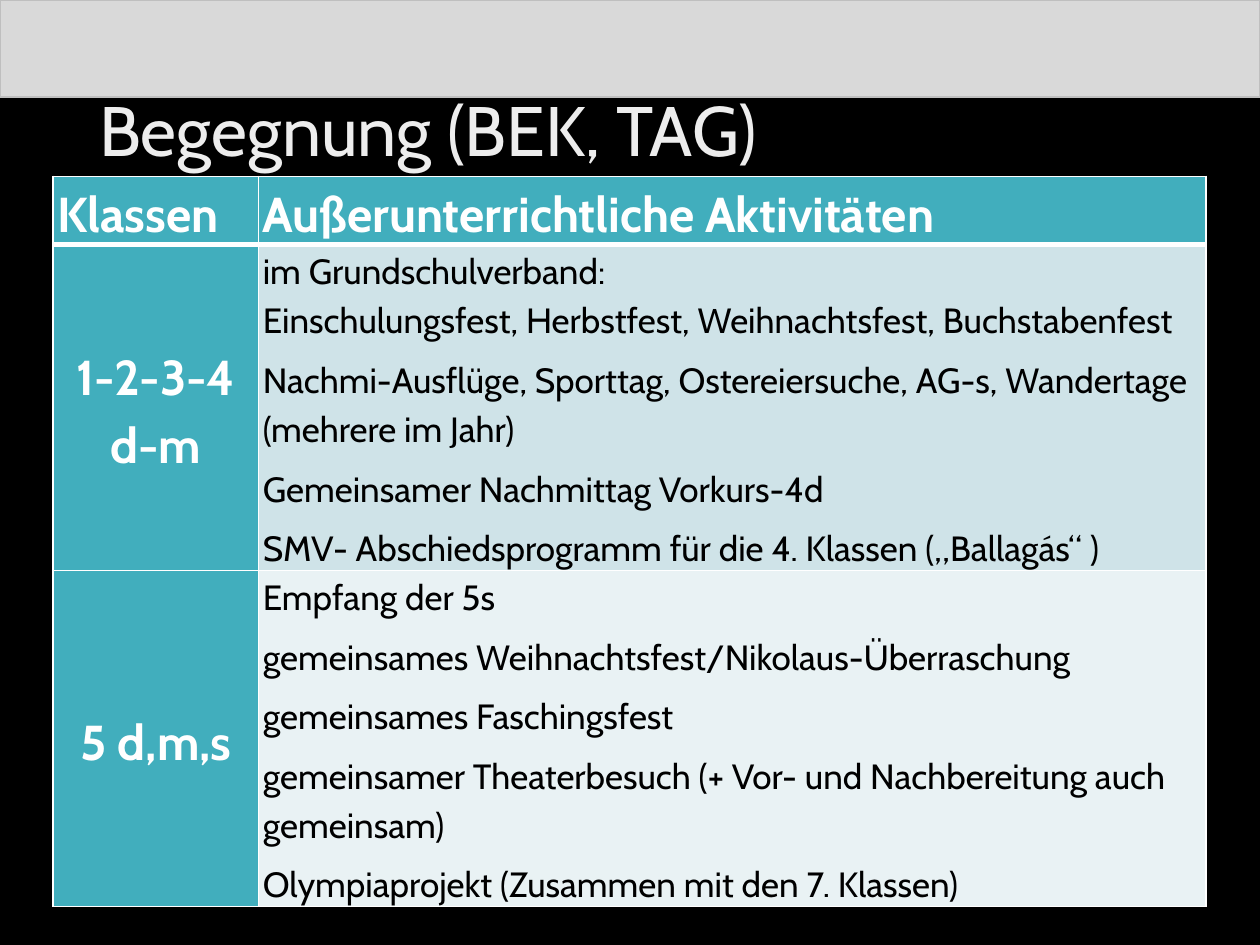
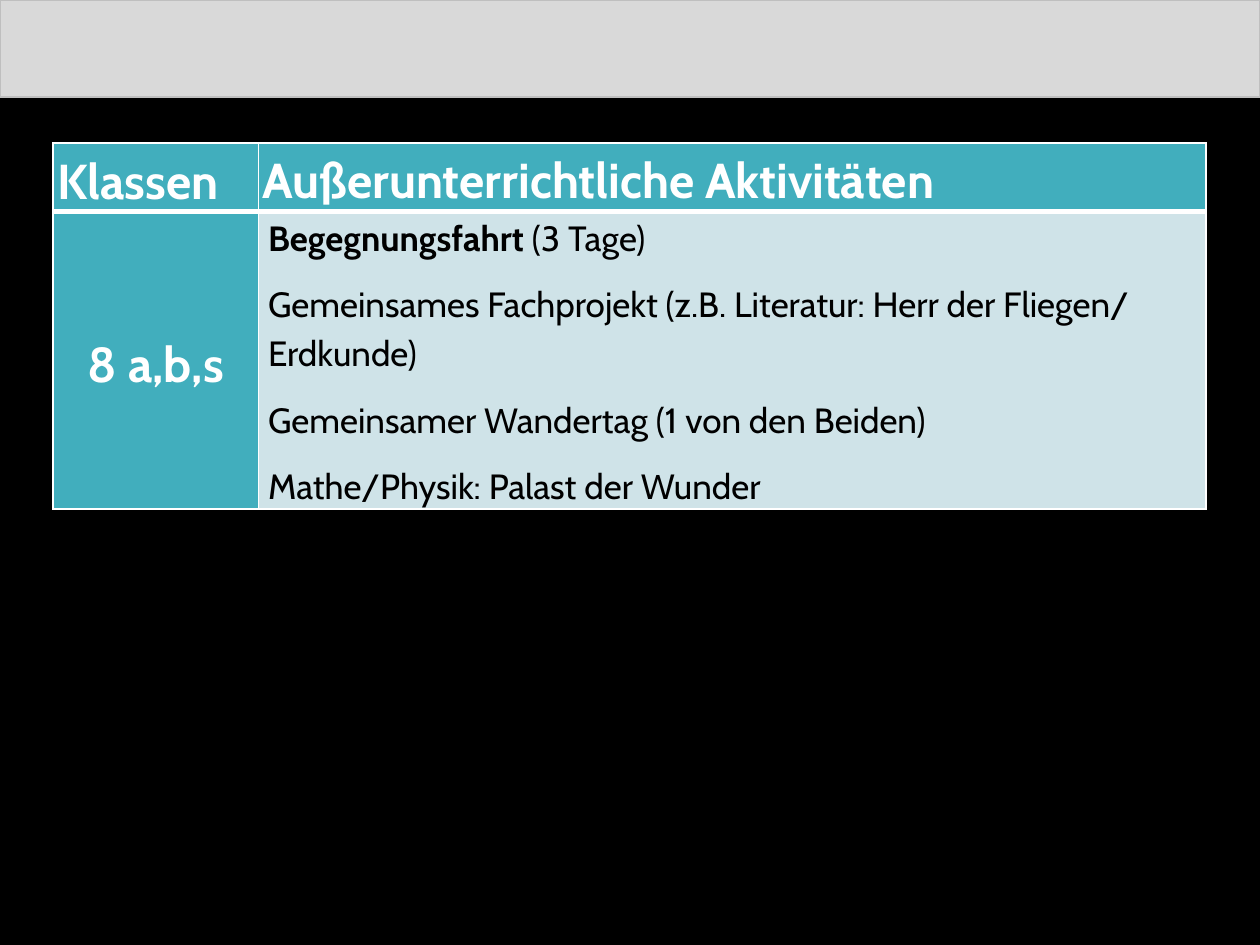
from pptx import Presentation
from pptx.dml.color import RGBColor
from pptx.enum import shapes, text
from pptx.util import Pt
from lxml import etree

NS = "http://schemas.openxmlformats.org/drawingml/2006/main"
FONT = "Cabin"
BLACK, WHITE, TEAL = "000000", "FFFFFF", "41AEBD"
BAND, RIM, TITLE = "D9D9D9", "BFBFBF", "EDEDED"
TINTS = ["CFE3E8", "E9F2F4"]
COLS = [117.4, 541.4]
LEFT = 30.4
HEAD = ["Klassen", "Außerunterrichtliche Aktivitäten"]


def rgb(code):
    return RGBColor.from_string(code)


def edge(cell, sides):
    """Draw white cell borders; sides maps L, R, T, B to widths in points."""
    props = cell._tc.get_or_add_tcPr()
    for side in "LRTB":
        line = etree.SubElement(props, f"{{{NS}}}ln{side}", w=str(Pt(sides[side])))
        fill = etree.SubElement(line, f"{{{NS}}}solidFill")
        etree.SubElement(fill, f"{{{NS}}}srgbClr", val=WHITE)


class Deck:
    def __init__(self):
        self.prs = Presentation()
        self.prs.slide_width, self.prs.slide_height = Pt(720), Pt(540)
        back = self.prs.slide_master.background.fill
        back.solid()
        back.fore_color.rgb = rgb(BLACK)
        self.slide = None

    def page(self, title=None):
        layout = self.prs.slide_layouts[5 if title else 6]
        self.slide = self.prs.slides.add_slide(layout)
        self.band()
        if title:
            self.title(title)

    def band(self):
        tree = self.slide.shapes
        bar = tree.add_shape(shapes.MSO_SHAPE.RECTANGLE, 0, 0, Pt(720), Pt(55.6))
        bar.shadow.inherit = False
        bar.fill.solid()
        bar.fill.fore_color.rgb = rgb(BAND)
        bar.line.color.rgb = rgb(RIM)
        bar.line.width = Pt(1)
        tree._spTree.insert(2, bar._element)  # behind the title

    def title(self, words):
        box = self.slide.shapes.title
        box.left, box.top, box.width, box.height = Pt(49.5), Pt(24.5), Pt(621), Pt(104.4)
        frame = box.text_frame
        frame.word_wrap = True
        frame.vertical_anchor = text.MSO_ANCHOR.MIDDLE
        para = frame.paragraphs[0]
        para.alignment = text.PP_ALIGN.LEFT
        para.line_spacing = 0.9
        self.run(para, words, 40, TITLE)

    def run(self, para, words, size, color, bold=False):
        run = para.add_run()
        run.text = words
        font = run.font
        font.name, font.size, font.bold = FONT, Pt(size), bold
        font.color.rgb = rgb(color)

    def cell(self, cell, fill, pad, sides, middle=False):
        edge(cell, sides)
        cell.fill.solid()
        cell.fill.fore_color.rgb = rgb(fill)
        cell.margin_left = cell.margin_right = Pt(pad)
        cell.margin_top = cell.margin_bottom = 0
        if middle:
            cell.vertical_anchor = text.MSO_ANCHOR.MIDDLE

    def para(self, cell, first, after):
        frame = cell.text_frame
        para = frame.paragraphs[0] if first else frame.add_paragraph()
        para.line_spacing = 1.15
        para.space_after = Pt(after)
        return para

    def label(self, cell, words, center=False):
        para = self.para(cell, True, 10)
        if center:
            para.alignment = text.PP_ALIGN.CENTER
        self.run(para, words, 28, WHITE, True)

    def items(self, cell, lines):
        """Each line is (space after, plain words, optional bold lead)."""
        for i, (after, words, *lead) in enumerate(lines):
            para = self.para(cell, i == 0, after)
            for part in lead:
                self.run(para, part, 20, BLACK, True)
            self.run(para, words, 20, BLACK)

    def table(self, top, heights, rows, pad):
        """Header row, then one row for each (classes, activities)."""
        grid = self.slide.shapes.add_table(
            len(heights), 2, Pt(LEFT), Pt(top), Pt(sum(COLS)), Pt(sum(heights))).table
        grid.first_row = grid.horz_banding = False
        for col, width in zip(grid.columns, COLS):
            col.width = Pt(width)
        for row, height in zip(grid.rows, heights):
            row.height = Pt(height)
        thin = dict.fromkeys("LRTB", 1)
        for c, words in enumerate(HEAD):
            head = grid.cell(0, c)
            self.cell(head, TEAL, 2.4, {**thin, "B": 3}, c == 0)
            self.label(head, words)
        for r, (name, lines) in enumerate(rows, 1):
            sides = {**thin, "T": 3 if r == 1 else 1}
            left, right = grid.cell(r, 0), grid.cell(r, 1)
            self.cell(left, TEAL, pad, sides, True)
            self.label(left, name, True)
            self.cell(right, TINTS[r - 1], pad, sides)
            self.items(right, lines)


def main():
    deck = Deck()
    deck.page("Begegnung (BEK, TAG)")
    deck.table(100.8, [38.6, 186, 192], [
        ("1-2-3-4 d-m", [
            (0, "im Grundschulverband:"),
            (6, "Einschulungsfest, Herbstfest, Weihnachtsfest, Buchstabenfest"),
            (6, "Nachmi-Ausflüge, Sporttag, Ostereiersuche, AG-s, Wandertage (mehrere im Jahr)"),
            (6, "Gemeinsamer Nachmittag Vorkurs-4d"),
            (10, "SMV- Abschiedsprogramm für die 4. Klassen („Ballagás“ )"),
        ]),
        ("5 d,m,s", [(6, words) for words in (
            "Empfang der 5s",
            "gemeinsames Weihnachtsfest/Nikolaus-Überraschung",
            "gemeinsames Faschingsfest",
            "gemeinsamer Theaterbesuch (+ Vor- und Nachbereitung auch gemeinsam)",
            "Olympiaprojekt (Zusammen mit den 7. Klassen)",
        )]),
    ], 2.4)

    deck.page()
    deck.table(81.6, [38.6, 169.8], [
        ("8 a,b,s", [
            (10, " (3 Tage)", "Begegnungsfahrt"),
            (10, "Gemeinsames Fachprojekt (z.B. Literatur: Herr der Fliegen/ Erdkunde)"),
            (10, "Gemeinsamer Wandertag (1 von den Beiden)"),
            (10, "Mathe/Physik: Palast der Wunder"),
        ]),
    ], 5.4)
    deck.prs.save("out.pptx")


if __name__ == "__main__":
    main()
